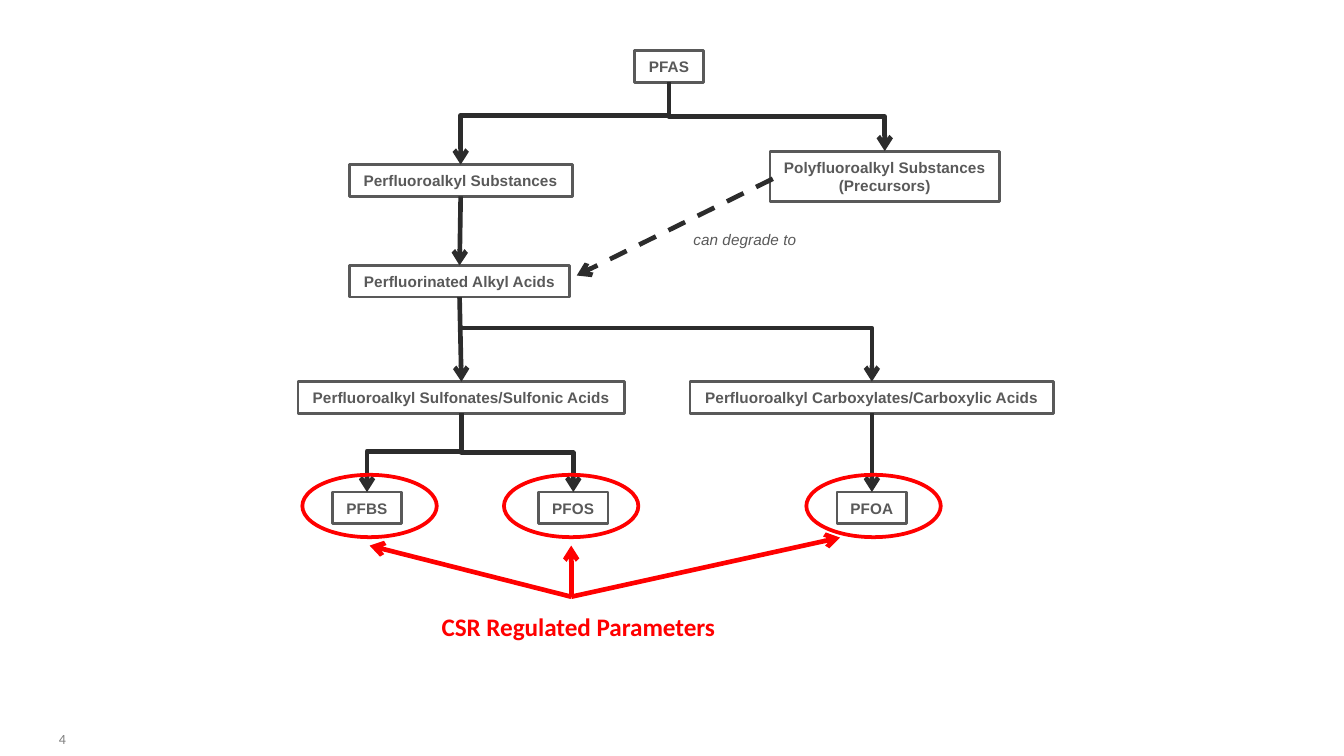
from lxml.etree import SubElement
from pptx import Presentation
from pptx.dml.color import RGBColor as RGB
from pptx.enum.dml import MSO_LINE as Dash
from pptx.enum.shapes import MSO_CONNECTOR as Conn, MSO_SHAPE as Kind
from pptx.enum.text import MSO_ANCHOR as Anchor, MSO_AUTO_SIZE as Fit, PP_ALIGN as Align
from pptx.oxml.ns import qn
from pptx.util import Pt

HUES = {"box": "595959", "flow": "2C2C2C", "mark": "FF0000", "page": "808080"}
TOP, LOW = 0, 2  # connection sites of a rectangle


def hue(name):
    return RGB.from_string(HUES[name])


def write(shape, text, size=8.25, font="Arial", color="box", bold=False,
          italic=False, align=Align.LEFT, anchor=Anchor.TOP):
    frame = shape.text_frame
    frame.word_wrap = False
    frame.auto_size = Fit.SHAPE_TO_FIT_TEXT
    frame.vertical_anchor = anchor
    frame.text = text
    for para in frame.paragraphs:
        para.alignment = align
        face = para.font
        face.name, face.size = font, Pt(size)
        face.bold, face.italic = bold, italic
        face.color.rgb = hue(color)


def label(slide, text, x, y, w, h, **style):
    write(slide.shapes.add_textbox(Pt(x), Pt(y), Pt(w), Pt(h)), text, **style)


def outline(slide, kind, x, y, w, h, color, width):
    shape = slide.shapes.add_shape(kind, Pt(x), Pt(y), Pt(w), Pt(h))
    shape.shadow.inherit = False
    shape.fill.background()
    shape.line.color.rgb = hue(color)
    shape.line.width = Pt(width)
    return shape


def box(slide, text, mid, y, w, h=17):
    shape = outline(slide, Kind.RECTANGLE, mid - w / 2, y, w, h, "box", 1.5)
    write(shape, text, bold=True, align=Align.CENTER, anchor=Anchor.MIDDLE)
    return shape


def arrow(slide, x1, y1, x2, y2, color="flow", kind=Conn.STRAIGHT):
    line = slide.shapes.add_connector(kind, Pt(x1), Pt(y1), Pt(x2), Pt(y2))
    line.line.color.rgb = hue(color)
    line.line.width = Pt(2.5)
    SubElement(line.line._get_or_add_ln(), qn("a:tailEnd"), type="arrow")
    SubElement(line._element.spPr, qn("a:effectLst"))
    return line


def link(slide, start, end):
    """Straight arrow from the bottom of one box to the top of another."""
    line = arrow(slide, 0, 0, 0, 0)
    line.begin_connect(start, LOW)
    line.end_connect(end, TOP)


def corner(slide, x1, y1, x2, y2):
    """Arrow that runs sideways, then down."""
    line = arrow(slide, x1, y1, x2, y2, kind=Conn.ELBOW)
    line._element.spPr.find(qn("a:prstGeom")).set("prst", "bentConnector2")


def step(slide, x1, y1, x2, y2):
    """Arrow that runs down, right, then down: an elbow turned by 270 degrees."""
    mx, my = (x1 + x2) / 2, (y1 + y2) / 2
    dx, dy = (x2 - x1) / 2, (y2 - y1) / 2
    line = arrow(slide, mx - dy, my - dx, mx + dy, my + dx, kind=Conn.ELBOW)
    xfrm = line._element.spPr.find(qn("a:xfrm"))
    xfrm.set("rot", "16200000")
    xfrm.set("flipH", "1")


def main():
    deck = Presentation()
    deck.slide_width, deck.slide_height = Pt(720), Pt(405)
    slide = deck.slides.add_slide(deck.slide_layouts[6])

    # Page number
    label(slide, "4", 24.5, 388, 30, 21.5, size=7.5, font="Calibri", color="page")

    # Substance families
    box(slide, "PFAS", 358.4, 27.2, 36.8)
    per = box(slide, "Perfluoroalkyl Substances", 246.8, 88.2, 119.5)
    box(slide, "Polyfluoroalkyl Substances\n(Precursors)", 474, 81, 123, 27)
    acid = box(slide, "Perfluorinated Alkyl Acids", 246.2, 142.2, 118)
    sulf = box(slide, "Perfluoroalkyl Sulfonates/Sulfonic Acids", 247.2, 204.5, 175)
    carb = box(slide, "Perfluoroalkyl Carboxylates/Carboxylic Acids", 467.1, 204.5, 195)

    # Single compounds
    box(slide, "PFBS", 196.6, 263.6, 37)
    box(slide, "PFOS", 307.1, 263.6, 37.4)
    pfoa = box(slide, "PFOA", 467.1, 263.6, 37.4)

    # Flow arrows
    step(slide, 358.4, 44.2, 474, 81)
    corner(slide, 358.4, 61.8, 246.8, 88.2)
    for start, end in ((per, acid), (acid, sulf), (carb, pfoa)):
        link(slide, start, end)
    corner(slide, 246.5, 175.8, 467.1, 204.5)
    step(slide, 247.2, 221.5, 307.1, 263.6)
    corner(slide, 247.6, 241.7, 196.6, 263.6)

    # Degradation path
    path = arrow(slide, 414, 95.8, 309, 147.6)
    path.line.dash_style = Dash.DASH
    label(slide, "can degrade to", 364.4, 119.6, 70.4, 17, italic=True)

    # Regulated compounds
    for x in (162, 432, 270):
        outline(slide, Kind.OVAL, x, 254.4, 72, 33.4, "mark", 2)
    for x, y in ((198, 292.3), (306, 292.3), (450, 288)):
        arrow(slide, 306, 319.7, x, y, color="mark")
    label(slide, "CSR Regulated Parameters", 229.5, 324, 163, 23.8,
          size=13.5, font="Calibri", color="mark", bold=True)

    deck.save("out.pptx")


if __name__ == "__main__":
    main()
